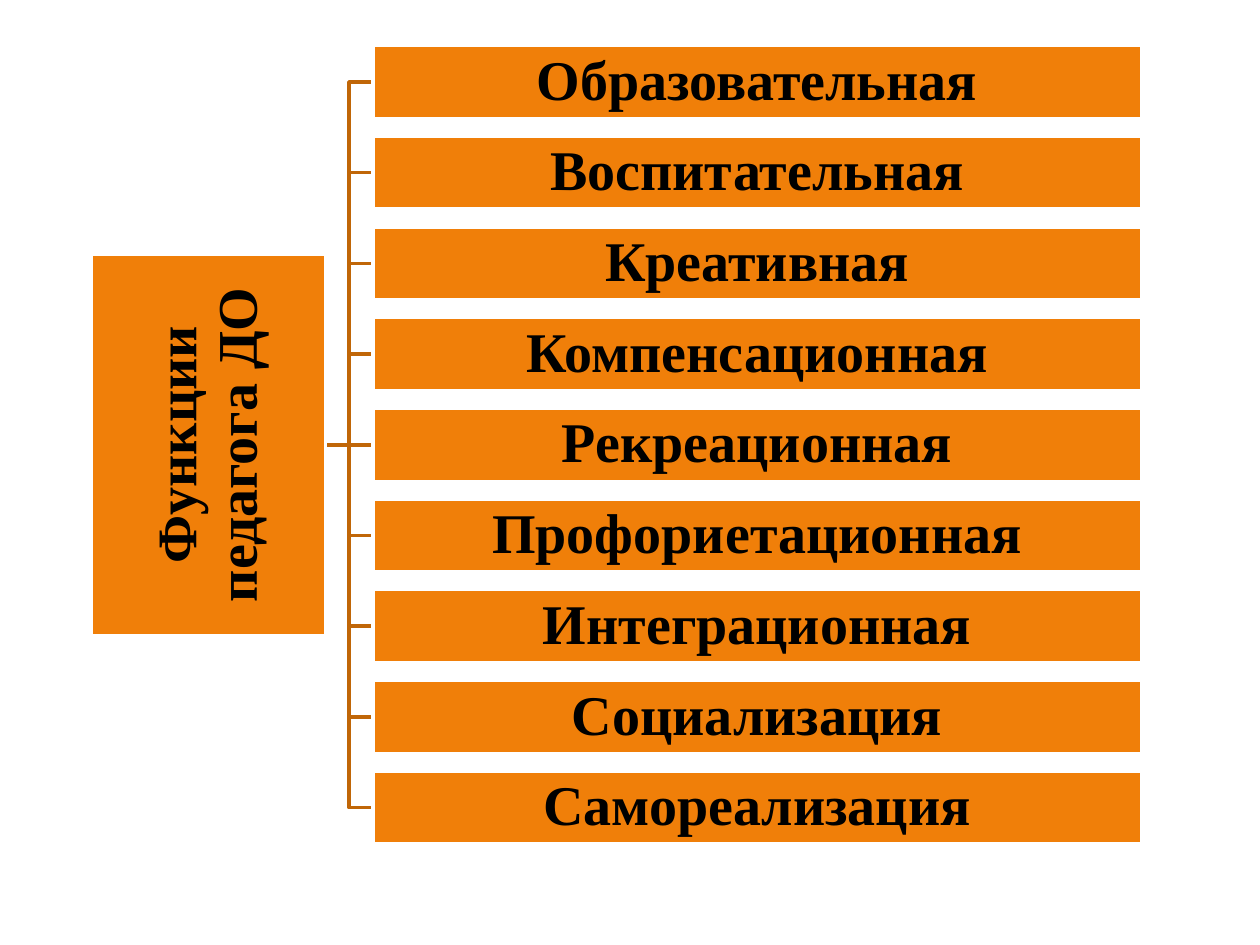
from dataclasses import dataclass

from lxml import etree
from pptx import Presentation
from pptx.dml.color import RGBColor
from pptx.enum.shapes import MSO_CONNECTOR, MSO_SHAPE
from pptx.enum.text import MSO_ANCHOR, PP_ALIGN
from pptx.oxml.ns import qn
from pptx.shapes.autoshape import Shape
from pptx.shapes.connector import Connector
from pptx.slide import Slide
from pptx.util import Emu, Pt

RECT = MSO_SHAPE.RECTANGLE
STRAIGHT = MSO_CONNECTOR.STRAIGHT
CENTER = PP_ALIGN.CENTER
MIDDLE = MSO_ANCHOR.MIDDLE

ORANGE = RGBColor(0xF0, 0x7F, 0x09)
BROWN = RGBColor(0xC0, 0x66, 0x07)
WHITE = RGBColor(0xFF, 0xFF, 0xFF)
BLACK = RGBColor(0x00, 0x00, 0x00)

EMU_PER_PX = 9144
FONT = "Times New Roman"
FUNCTIONS = (
    "Образовательная",
    "Воспитательная",
    "Креативная",
    "Компенсационная",
    "Рекреационная",
    "Профориетационная",
    "Интеграционная",
    "Социализация",
    "Самореализация",
)
ROW_TOP, ROW_PITCH = 36, 72
SPINE_X = 277
ROOT_RIGHT = 258


@dataclass(frozen=True)
class Box:
    text: str
    left: int
    top: int
    width: int
    height: int
    rotation: int = 0

    @property
    def mid_y(self) -> int:
        return self.top + self.height // 2


def px(value: int) -> Emu:
    return Emu(value * EMU_PER_PX)


def draw_box(s: Slide, box: Box) -> Shape:
    sp = s.shapes.add_shape(
        RECT, px(box.left), px(box.top), px(box.width), px(box.height)
    )
    sp.rotation = box.rotation
    sp.shadow.inherit = False
    sp.fill.solid()
    sp.fill.fore_color.rgb = ORANGE
    sp.line.color.rgb = WHITE
    sp.line.width = Pt(2)
    tf = sp.text_frame
    tf.text = box.text
    tf.word_wrap = True
    tf.vertical_anchor = MIDDLE
    tf.margin_left = tf.margin_right = tf.margin_top = tf.margin_bottom = px(2)
    p = tf.paragraphs[0]
    p.alignment = CENTER
    p.line_spacing = 0.9
    r = p.runs[0]
    r.font.name = FONT
    r.font.size = Pt(32)
    r.font.bold = True
    r.font.color.rgb = BLACK
    return sp


def style_line(line: Shape | Connector) -> None:
    line.line.color.rgb = BROWN
    line.line.width = Pt(2)


def draw_branch(s: Slide, start_y: int, row: Box) -> None:
    builder = s.shapes.build_freeform(ROOT_RIGHT, start_y, scale=EMU_PER_PX)
    builder.add_line_segments(
        [(SPINE_X, start_y), (SPINE_X, row.mid_y), (row.left, row.mid_y)],
        close=False,
    )
    branch = builder.convert_to_shape()
    branch.shadow.inherit = False
    branch.fill.background()
    style_line(branch)


def draw_middle_link(s: Slide, row: Box) -> Connector:
    link = s.shapes.add_connector(
        STRAIGHT, px(ROOT_RIGHT), px(row.mid_y), px(row.left), px(row.mid_y)
    )
    style_line(link)
    etree.SubElement(link._element.spPr, qn("a:effectLst"))
    return link


def main() -> None:
    prs = Presentation()
    prs.slide_width, prs.slide_height = px(1000), px(750)
    s = prs.slides.add_slide(prs.slide_layouts[6])

    root = Box("Функции педагога ДО", 14, 260, 303, 186, 270)
    rows = [
        Box(name, 296, ROW_TOP + i * ROW_PITCH, 610, 58)
        for i, name in enumerate(FUNCTIONS)
    ]
    middle = len(rows) // 2

    for row in rows:
        if row is not rows[middle]:
            draw_branch(s, root.mid_y, row)
    link = draw_middle_link(s, rows[middle])

    draw_box(s, root)
    row_shapes = [draw_box(s, row) for row in rows]
    link.end_connect(row_shapes[middle], 1)

    prs.save("out.pptx")


if __name__ == "__main__":
    main()
